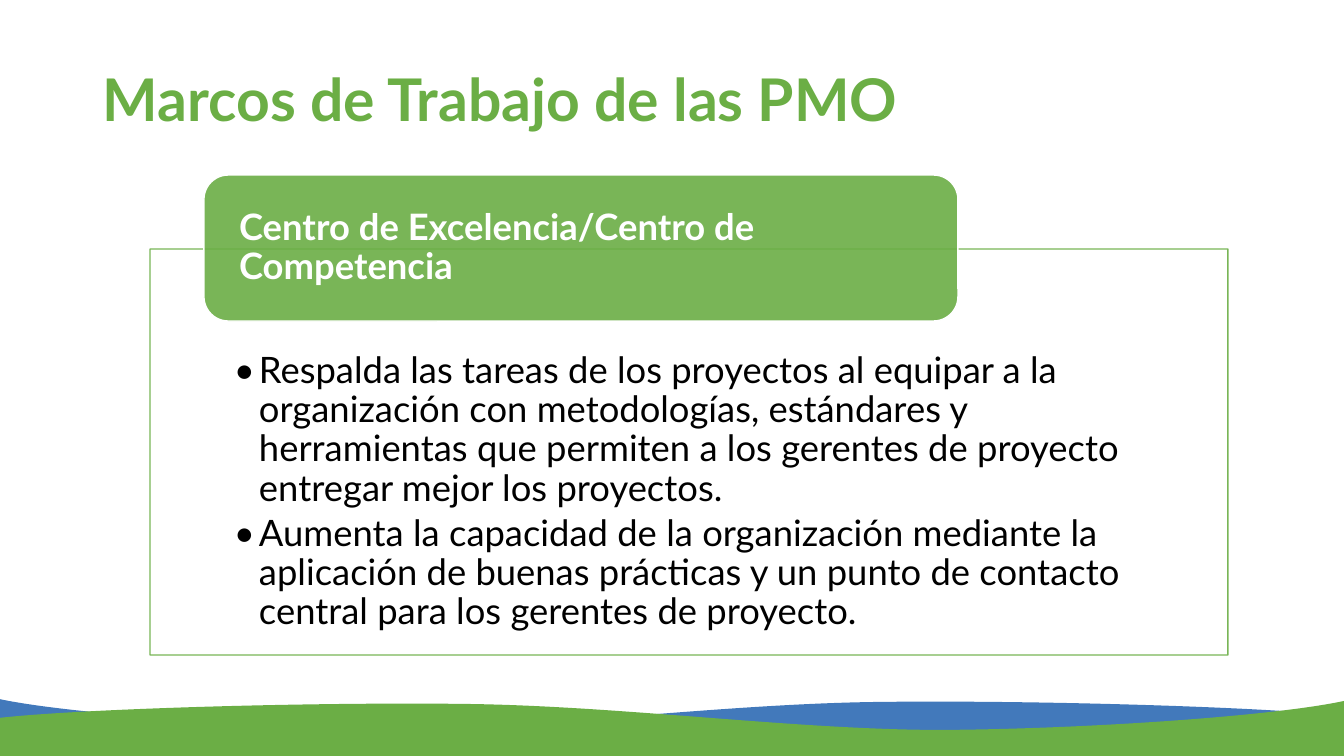
from dataclasses import dataclass

import pptx
import pptx.dml.color
import pptx.dml.fill
import pptx.enum.shapes
import pptx.enum.text
import pptx.oxml
import pptx.oxml.ns
import pptx.slide
import pptx.util
from lxml import etree

Point = tuple[int, int]

EMU_PER_PX = 12192000 / 1344
WIDTH, HEIGHT = 1344, 756
GREEN, BLUE, WHITE, BLACK = "6BAE45", "4279BB", "FFFFFF", "000000"
FONT = "Lato"


@dataclass
class Wave:
    """Crest holds three points per curve: two controls and an end."""
    color: str
    start: Point
    crest: list[Point]
    base: list[Point]


@dataclass
class Box:
    left: int
    top: int
    width: int
    height: int


@dataclass
class Panel:
    box: Box
    shape: pptx.enum.shapes.MSO_SHAPE
    fill: str
    line: str
    line_opacity: int


WAVES = [
    Wave(BLUE, (1344, 716),
         [(1266, 707), (1034, 700), (877, 702),
          (721, 704), (547, 728), (401, 728),
          (255, 727), (69, 714), (-1, 699)],
         [(-1, 755), (1344, 756)]),
    Wave(GREEN, (-1, 718),
         [(77, 709), (308, 702), (466, 704),
          (623, 706), (795, 730), (942, 730),
          (1089, 729), (1275, 716), (1344, 701)],
         [(1345, 756), (0, 758)]),
]
TITLE_BOX = Box(93, 29, 1159, 146)
FRAME_BOX = Box(150, 249, 1078, 406)
HEADER_TEXT_BOX = Box(211, 182, 740, 132)
FRAME = Panel(FRAME_BOX, pptx.enum.shapes.MSO_SHAPE.RECTANGLE, WHITE, GREEN, 90)
HEADER = Panel(Box(204, 175, 754, 146), pptx.enum.shapes.MSO_SHAPE.ROUNDED_RECTANGLE,
               GREEN, WHITE, 100)
BENEFITS = [
    "Respalda las tareas de los proyectos al equipar a la organización con metodologías, "
    "estándares y herramientas que permiten a los gerentes de proyecto entregar mejor los proyectos.",
    "Aumenta la capacidad de la organización mediante la aplicación de buenas prácticas "
    "y un punto de contacto central para los gerentes de proyecto.",
]


def px(n: int) -> pptx.util.Emu:
    return pptx.util.Emu(round(n * EMU_PER_PX))


def place(box: Box) -> tuple[pptx.util.Emu, ...]:
    return px(box.left), px(box.top), px(box.width), px(box.height)


def rgb(color: str) -> pptx.dml.color.RGBColor:
    return pptx.dml.color.RGBColor.from_string(color)


def set_fill(fill: pptx.dml.fill.FillFormat, parent: etree._Element,
             color: str, opacity: int = 100) -> None:
    """Fill solidly; parent is the element that holds the solidFill."""
    fill.solid()
    fill.fore_color.rgb = rgb(color)
    if opacity < 100:
        clr = parent.find(pptx.oxml.ns.qn("a:solidFill"))[0]
        etree.SubElement(clr, pptx.oxml.ns.qn("a:alpha"), val=str(opacity * 1000))


def curve_segments(sp_element: etree._Element, count: int) -> None:
    """Turn the first count line segments into cubic curves, three to a curve."""
    lines = list(sp_element.iter(pptx.oxml.ns.qn("a:lnTo")))[:count]
    for i in range(0, count, 3):
        curve = etree.Element(pptx.oxml.ns.qn("a:cubicBezTo"))
        lines[i].addprevious(curve)
        for line in lines[i:i + 3]:
            curve.append(line[0])
            line.getparent().remove(line)


def add_wave(s: pptx.slide.Slide, wave: Wave) -> None:
    builder = s.shapes.build_freeform(px(wave.start[0]), px(wave.start[1]))
    builder.add_line_segments([(px(x), px(y)) for x, y in wave.crest + wave.base], close=True)
    sp = builder.convert_to_shape()
    curve_segments(sp._element, len(wave.crest))
    sp.shadow.inherit = False
    set_fill(sp.fill, sp._element.spPr, wave.color)
    sp.line.fill.background()


def add_panel(s: pptx.slide.Slide, panel: Panel) -> None:
    sp = s.shapes.add_shape(panel.shape, *place(panel.box))
    sp.shadow.inherit = False
    set_fill(sp.fill, sp._element.spPr, panel.fill, 90)
    sp.line.width = pptx.util.Pt(1)
    set_fill(sp.line.fill, sp.line._get_or_add_ln(), panel.line, panel.line_opacity)


def add_text(s: pptx.slide.Slide, box: Box, texts: list[str], *, size: int, color: str,
             bold: bool = False, bullet_indent: int = 0, space_after: int = 0,
             insets: tuple[int, int, int, int] = (10, 5, 10, 5),
             anchor: pptx.enum.text.MSO_ANCHOR = pptx.enum.text.MSO_ANCHOR.MIDDLE) -> None:
    """Write one paragraph per text; insets run left, top, right, bottom."""
    tf = s.shapes.add_textbox(*place(box)).text_frame
    tf.word_wrap = True
    tf.vertical_anchor = anchor
    tf.margin_left, tf.margin_top, tf.margin_right, tf.margin_bottom = map(px, insets)
    for i, text in enumerate(texts):
        p = tf.add_paragraph() if i else tf.paragraphs[0]
        p.line_spacing = 0.9
        p.space_after = pptx.util.Pt(space_after)
        if bullet_indent:
            pPr = p._p.get_or_add_pPr()
            pPr.set("marL", str(px(bullet_indent)))
            pPr.set("indent", str(-px(bullet_indent)))
            etree.SubElement(pPr, pptx.oxml.ns.qn("a:buFont"), typeface=FONT)
            etree.SubElement(pPr, pptx.oxml.ns.qn("a:buChar"), char="•")
        r = p.add_run()
        r.text = text
        r.font.name = FONT
        r.font.size = pptx.util.Pt(size)
        r.font.bold = bold
        r.font.color.rgb = rgb(color)


def main() -> None:
    prs = pptx.Presentation()
    prs.slide_width, prs.slide_height = px(WIDTH), px(HEIGHT)
    s = prs.slides.add_slide(prs.slide_layouts[6])
    for wave in WAVES:
        add_wave(s, wave)

    add_text(s, TITLE_BOX, ["Marcos de Trabajo de las PMO"], size=42, color=GREEN, bold=True)
    add_panel(s, FRAME)
    add_text(s, FRAME_BOX, BENEFITS, size=26, color=BLACK, bullet_indent=25, space_after=4,
             insets=(84, 103, 84, 20), anchor=pptx.enum.text.MSO_ANCHOR.TOP)
    add_panel(s, HEADER)
    add_text(s, HEADER_TEXT_BOX, ["Centro de Excelencia/Centro de Competencia"],
             size=26, color=WHITE, bold=True, insets=(28, 0, 28, 0))
    prs.save("out.pptx")


if __name__ == "__main__":
    main()
